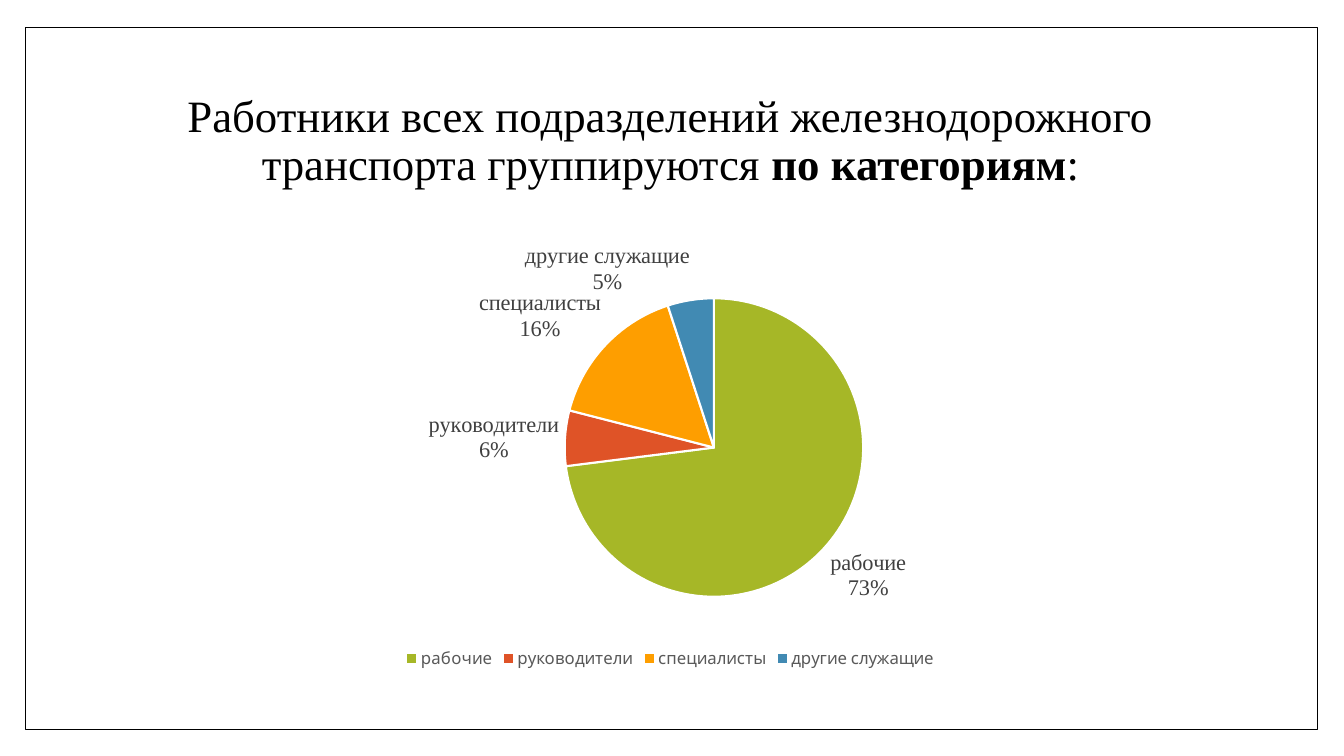
from lxml.etree import SubElement
from pptx import Presentation
from pptx.chart.data import CategoryChartData
from pptx.dml.color import RGBColor
from pptx.enum.chart import XL_CHART_TYPE, XL_LABEL_POSITION, XL_LEGEND_POSITION
from pptx.enum.shapes import MSO_SHAPE
from pptx.enum.text import MSO_ANCHOR, PP_ALIGN
from pptx.oxml.ns import qn
from pptx.util import Cm, Pt

COLORS = {"white": "FFFFFF", "black": "000000", "label": "404040", "legend": "595959"}
CATEGORIES = {
    "рабочие": (73, "A6B727"),
    "руководители": (6, "DF5327"),
    "специалисты": (16, "FE9E00"),
    "другие служащие": (5, "418AB3"),
}
PIE_AREA = {"x": 0.4, "y": 0.16, "w": 0.28, "h": 0.67}


def set_font(font, name, size, color):
    for key, value in {"name": name, "size": Pt(size)}.items():
        setattr(font, key, value)
    font.color.rgb = RGBColor.from_string(COLORS[color])


deck = Presentation()
deck.slide_width, deck.slide_height = Cm(33.87), Cm(19.05)
page = deck.slides.add_slide(deck.slide_layouts[5])

# Frame behind everything else
frame = page.shapes.add_shape(MSO_SHAPE.RECTANGLE, Cm(0.64), Cm(0.69), Cm(32.56), Cm(17.7))
frame.shadow.inherit = False
frame.fill.solid()
frame.fill.fore_color.rgb = RGBColor.from_string(COLORS["white"])
frame.line.color.rgb = RGBColor.from_string(COLORS["black"])
frame.line.width = Pt(1)
page.shapes.title.element.addprevious(frame.element)

# Title
title = page.shapes.title
title.left, title.top, title.width, title.height = Cm(3.18), Cm(1.7), Cm(27.43), Cm(3.76)
title.text_frame.word_wrap = True
title.text_frame.vertical_anchor = MSO_ANCHOR.MIDDLE
para = title.text_frame.paragraphs[0]
para.alignment = PP_ALIGN.CENTER
para.line_spacing = 0.9
for text, bold in (
    ("Работники всех подразделений железнодорожного транспорта группируются ", False),
    ("по категориям", True),
    (":", False),
):
    span = para.add_run()
    span.text = text
    set_font(span.font, "Times New Roman", 32, "black")
    span.font.bold = bold

# Pie chart
data = CategoryChartData()
data.categories = list(CATEGORIES)
data.add_series("Series 1", [share for share, _ in CATEGORIES.values()])
chart = page.shapes.add_chart(
    XL_CHART_TYPE.PIE, Cm(3.18), Cm(5.72), Cm(27.43), Cm(11.23), data
).chart
set_font(chart.font, "Cabin", 10, "black")
chart.has_title = False
chart.has_legend = True
chart.legend.position = XL_LEGEND_POSITION.BOTTOM
chart.legend.include_in_layout = False
set_font(chart.legend.font, "Cabin", 12, "legend")

pie = chart.plots[0]
pie.vary_by_categories = True
for index, (_, color) in enumerate(CATEGORIES.values()):
    slice_format = pie.series[0].points[index].format
    slice_format.fill.solid()
    slice_format.fill.fore_color.rgb = RGBColor.from_string(color)
    slice_format.line.color.rgb = RGBColor.from_string(COLORS["white"])
    slice_format.line.width = Pt(1.5)

labels = pie.series[0].data_labels
for key, value in {
    "show_category_name": True,
    "show_percentage": True,
    "show_value": False,
    "position": XL_LABEL_POSITION.OUTSIDE_END,
}.items():
    setattr(labels, key, value)
set_font(labels.font, "Times New Roman", 16, "label")

# Fixed plot area, in fractions of the chart
plot_area = chart.element.find(".//" + qn("c:plotArea"))
layout = plot_area.find(qn("c:layout"))
if layout is None:
    layout = SubElement(plot_area, qn("c:layout"))
    plot_area.insert(0, layout)
manual = SubElement(layout, qn("c:manualLayout"))
for tag, value in {
    "layoutTarget": "inner", "xMode": "edge", "yMode": "edge", **PIE_AREA
}.items():
    SubElement(manual, qn("c:" + tag)).set("val", str(value))

deck.save("out.pptx")
